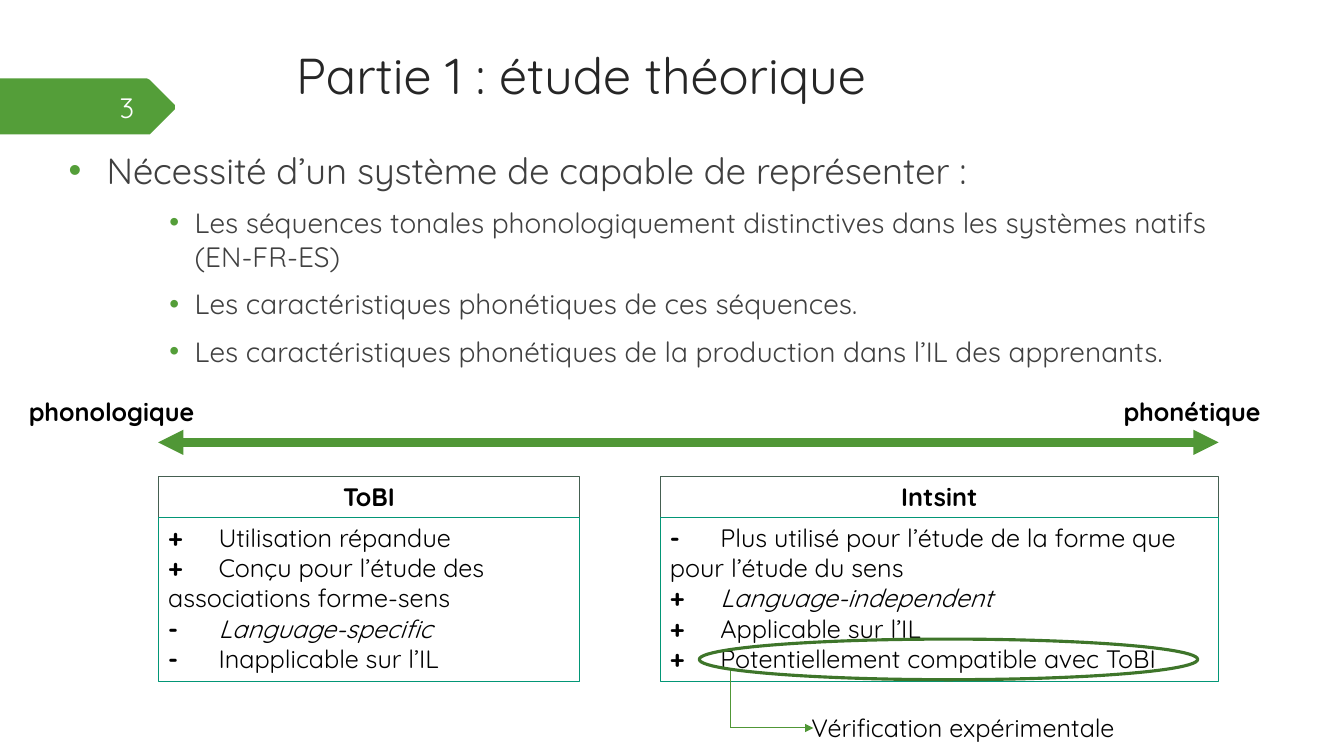
"""Build the slide comparing ToBI and Intsint on a phonological-phonetic axis."""
from lxml import etree
from pptx import Presentation
from pptx.dml.color import RGBColor
from pptx.enum.shapes import MSO_CONNECTOR, MSO_SHAPE
from pptx.enum.text import MSO_ANCHOR, MSO_AUTO_SIZE, PP_ALIGN
from pptx.oxml.ns import qn
from pptx.util import Pt

RECTANGLE, OVAL = MSO_SHAPE.RECTANGLE, MSO_SHAPE.OVAL
STRAIGHT = MSO_CONNECTOR.STRAIGHT
LEFT, CENTER, RIGHT = PP_ALIGN.LEFT, PP_ALIGN.CENTER, PP_ALIGN.RIGHT
TOP, MIDDLE = MSO_ANCHOR.TOP, MSO_ANCHOR.MIDDLE
GROW, FIXED = MSO_AUTO_SIZE.SHAPE_TO_FIT_TEXT, MSO_AUTO_SIZE.NONE

FONT = "Quicksand"
GREEN, ARROW_GREEN, OVAL_GREEN = "549E39", "509736", "3E752A"
HEADER_LINE, BODY_LINE = "455F51", "029676"
BLACK, TITLE_GREY, TEXT_GREY, PAGE_WHITE = "000000", "262626", "404040", "FEFFFF"

TITLE = "Partie 1 : étude théorique"
PAGE = "3"
NEEDS = [
    (0, "Nécessité d’un système de capable de représenter :"),
    (1, "Les séquences tonales phonologiquement distinctives dans les systèmes natifs (EN-FR-ES)"),
    (1, "Les caractéristiques phonétiques de ces séquences."),
    (1, "Les caractéristiques phonétiques de la production dans l’IL des apprenants."),
]
NEED_LEVELS = [
    {"size": 26, "margin": 27, "hang": 27, "before": 0},
    {"size": 20, "margin": 90, "hang": 18, "before": 10},
]
SYSTEMS = [
    ("ToBI", 113, 301, [
        ("+", "Utilisation répandue", False),
        ("+", "Conçu pour l’étude des \tassociations forme-sens", False),
        ("-", "Language-specific", True),
        ("-", "Inapplicable sur l’IL", False),
    ]),
    ("Intsint", 471.5, 399, [
        ("-", "Plus utilisé pour l’étude de la forme que \tpour l’étude du sens", False),
        ("+", "Language-independent", True),
        ("+", "Applicable sur l’IL", False),
        ("+", "Potentiellement compatible avec ToBI", False),
    ]),
]
LABELS = [
    ("phonologique", 13.5, 279.5, 138, True),
    ("phonétique", 795.5, 279.5, 116, True),
    ("Vérification expérimentale", 572.5, 505.5, 248, False),
]
ARROWS = [
    ((113, 316), (870.5, 316), 6, ("headEnd", "tailEnd")),
    ((522, 478), (522, 520), 0.75, ()),
    ((522, 520), (581, 520), 0.75, ("tailEnd",)),
]
PAGE_TAG = [(0, 56.2), (105, 56.2), (107, 57), (124.7, 74.7), (125.3, 76.3),
            (124.7, 78), (107, 95.7), (105, 96.3), (0, 96)]
HEADER_TOP, HEADER_HEIGHT, BODY_HEIGHT = 340.5, 29, 117


def color(hex_code):
    """Turn a hex string into a colour."""
    return RGBColor.from_string(hex_code)


def add_run(paragraph, text, size, hex_code=BLACK, bold=False, italic=False):
    """Append one formatted run."""
    run = paragraph.add_run()
    run.text = text
    font = run.font
    font.name, font.size, font.bold, font.italic = FONT, Pt(size), bold, italic
    font.color.rgb = color(hex_code)


def set_frame(holder, anchor=TOP, wrap=True, fit=FIXED):
    """Set up a text frame and return it."""
    frame = holder.text_frame
    frame.word_wrap, frame.auto_size, frame.vertical_anchor = wrap, fit, anchor
    return frame


def add_text(slide, box, text, size, hex_code, align=LEFT, bold=False, **layout):
    """Add a one-paragraph text box."""
    frame = set_frame(slide.shapes.add_textbox(*map(Pt, box)), **layout)
    frame.paragraphs[0].alignment = align
    add_run(frame.paragraphs[0], text, size, hex_code, bold)


def add_outline(slide, preset, box, hex_code, width):
    """Add an unfilled preset shape."""
    outline = slide.shapes.add_shape(preset, *map(Pt, box))
    outline.shadow.inherit = False
    outline.fill.background()
    outline.line.color.rgb = color(hex_code)
    outline.line.width = Pt(width)
    return outline


def add_page_tag(slide):
    """Draw the green tag behind the page number."""
    builder = slide.shapes.build_freeform(*PAGE_TAG[0], scale=Pt(1))
    builder.add_line_segments(PAGE_TAG[1:], close=True)
    tag = builder.convert_to_shape()
    tag.shadow.inherit = False
    tag.fill.solid()
    tag.fill.fore_color.rgb = color(GREEN)
    tag.line.fill.background()


def add_needs(slide):
    """Add the bulleted list of needs."""
    frame = set_frame(slide.shapes.add_textbox(Pt(42), Pt(102), Pt(864), Pt(364)))
    for index, (level, text) in enumerate(NEEDS):
        paragraph = frame.add_paragraph() if index else frame.paragraphs[0]
        style = NEED_LEVELS[level]
        paragraph.level = level
        paragraph.space_before = Pt(style["before"])
        props = paragraph._p.get_or_add_pPr()
        props.set("marL", str(Pt(style["margin"])))
        props.set("indent", str(-Pt(style["hang"])))
        bullet_color = etree.SubElement(props, qn("a:buClr"))
        etree.SubElement(bullet_color, qn("a:srgbClr"), val=GREEN)
        etree.SubElement(props, qn("a:buFont"), typeface="Arial")
        etree.SubElement(props, qn("a:buChar"), char="•")
        add_run(paragraph, text, style["size"], TEXT_GREY)


def add_system(slide, name, left, width, traits):
    """Add a system's header box and its list of pros and cons."""
    header_box = (left, HEADER_TOP, width, HEADER_HEIGHT)
    header = set_frame(add_outline(slide, RECTANGLE, header_box, HEADER_LINE, 0.75), fit=GROW)
    header.paragraphs[0].alignment = CENTER
    add_run(header.paragraphs[0], name, 18, bold=True)

    body_box = (left, HEADER_TOP + HEADER_HEIGHT, width, BODY_HEIGHT)
    body = set_frame(add_outline(slide, RECTANGLE, body_box, BODY_LINE, 0.75), fit=GROW)
    for index, (sign, text, italic) in enumerate(traits):
        paragraph = body.add_paragraph() if index else body.paragraphs[0]
        paragraph.alignment = LEFT
        paragraph._p.get_or_add_pPr().set("defTabSz", str(Pt(36)))
        add_run(paragraph, sign + "\t", 18, bold=True)
        add_run(paragraph, text, 18, italic=italic)


def add_arrow(slide, start, end, width, heads):
    """Add a straight line with the given arrowheads."""
    arrow = slide.shapes.add_connector(STRAIGHT, *map(Pt, start + end))
    arrow.line.color.rgb = color(ARROW_GREEN)
    arrow.line.width = Pt(width)
    for head in heads:
        etree.SubElement(arrow.line._get_or_add_ln(), qn("a:" + head), type="triangle")
    etree.SubElement(arrow._element.spPr, qn("a:effectLst"))


def main():
    """Compose and save the slide."""
    deck = Presentation()
    deck.slide_width, deck.slide_height = Pt(960), Pt(540)
    slide = deck.slides.add_slide(deck.slide_layouts[6])
    add_page_tag(slide)
    add_text(slide, (204.5, 28, 702, 68.5), TITLE, 36, TITLE_GREY)
    add_needs(slide)
    add_text(slide, (42, 62, 61, 29), PAGE, 20, PAGE_WHITE, RIGHT, anchor=MIDDLE)
    for system in SYSTEMS:
        add_system(slide, *system)
    for arrow in ARROWS:
        add_arrow(slide, *arrow)
    for text, left, top, width, bold in LABELS:
        add_text(slide, (left, top, width, 29), text, 18, BLACK, bold=bold, wrap=False, fit=GROW)
    add_outline(slide, OVAL, (499.5, 456.5, 356, 29), OVAL_GREEN, 2.25)
    deck.save("out.pptx")


if __name__ == "__main__":
    main()
